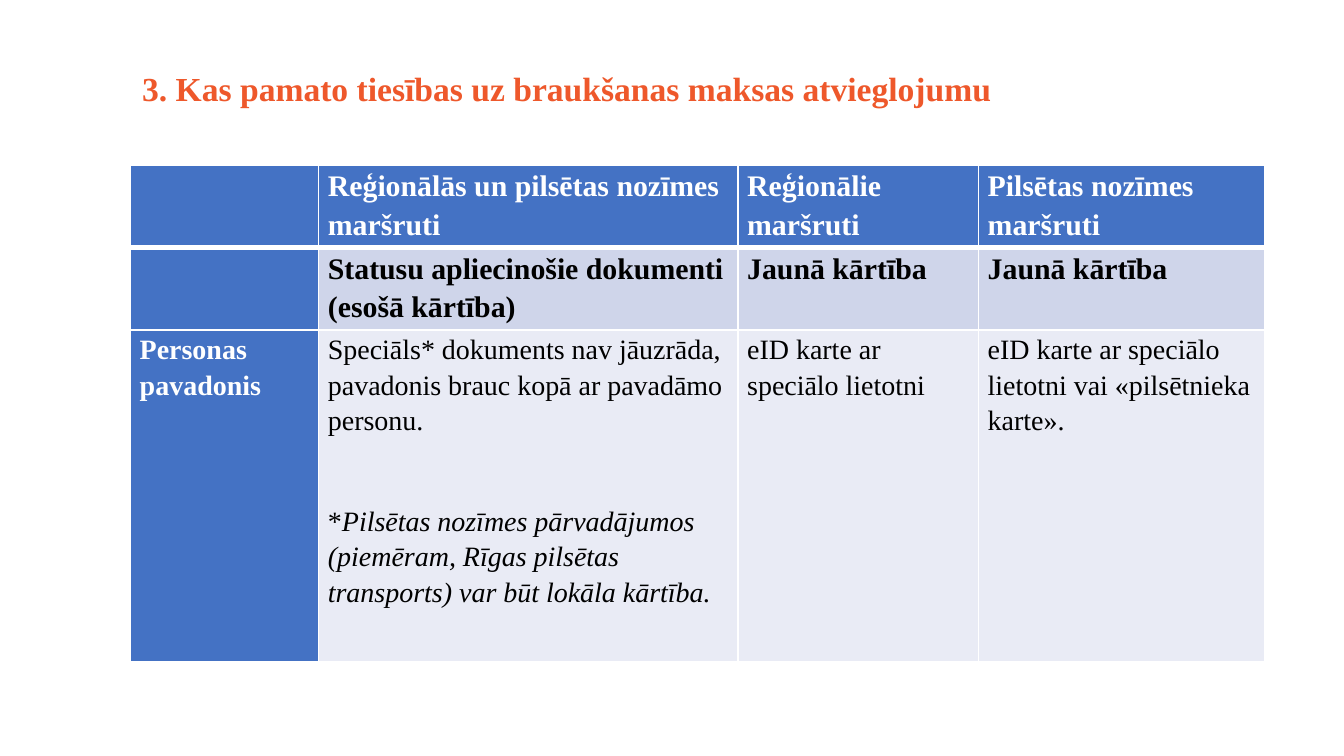
"""Build a slide with a table of fare discount documents."""
from dataclasses import dataclass

import lxml.etree
import pptx
import pptx.dml.color
import pptx.enum.text
import pptx.oxml.ns
import pptx.util

Pt = pptx.util.Pt
FONT = "Times New Roman"
WHITE, BLACK, BLUE = "FFFFFF", "000000", "4472C4"
WIDTHS = (100.8, 224.64, 128.88, 153.36)
HEIGHTS = (43.92, 21.6, 177.84)


@dataclass(frozen=True)
class Run:
    text: str
    slant: bool = False


@dataclass(frozen=True)
class Para:
    runs: tuple[Run, ...]
    before: float = 0


@dataclass(frozen=True)
class Style:
    size: float
    ink: str
    bold: bool = True


@dataclass(frozen=True)
class Row:
    fill: str
    head: Style
    body: Style
    cells: tuple[tuple[Para, ...], ...]


def plain(text: str) -> tuple[Para, ...]:
    return (Para((Run(text),)),)


HEAD = Style(16, WHITE)
LABEL = Style(15, WHITE)
NOTE = Para((Run("*"), Run(
    "Pilsētas nozīmes pārvadājumos (piemēram, Rīgas pilsētas transports) "
    "var būt lokāla kārtība.", True)), 27)
ROWS = (
    Row(BLUE, HEAD, HEAD, (
        (),
        plain("Reģionālās un pilsētas nozīmes maršruti"),
        plain("Reģionālie maršruti"),
        plain("Pilsētas nozīmes maršruti"))),
    Row("CFD5EA", HEAD, Style(16, BLACK), (
        (),
        plain("Statusu apliecinošie dokumenti (esošā kārtība)"),
        plain("Jaunā kārtība"),
        plain("Jaunā kārtība"))),
    Row("E9EBF5", LABEL, Style(15, BLACK, False), (
        plain("Personas pavadonis"),
        plain("Speciāls* dokuments nav jāuzrāda, pavadonis brauc kopā ar "
              "pavadāmo personu.") + (NOTE,),
        plain("eID karte ar speciālo lietotni"),
        plain("eID karte ar speciālo lietotni vai «pilsētnieka karte»."))),
)


def color(code: str) -> pptx.dml.color.RGBColor:
    return pptx.dml.color.RGBColor.from_string(code)


def write(line, part: Run, style: Style) -> None:
    run = line.add_run()
    run.text = part.text
    font = run.font
    font.name, font.size = FONT, Pt(style.size)
    font.bold, font.italic = style.bold, part.slant
    font.color.rgb = color(style.ink)


def border(cell, sides: dict[str, float]) -> None:
    props = cell._tc.get_or_add_tcPr()
    name = pptx.oxml.ns.qn
    for side, width in sides.items():
        edge = lxml.etree.SubElement(props, name(f"a:ln{side}"), w=str(Pt(width)))
        fill = lxml.etree.SubElement(edge, name("a:solidFill"))
        lxml.etree.SubElement(fill, name("a:srgbClr"), val=WHITE)


def fill_cell(cell, paras: tuple[Para, ...], style: Style, fill: str) -> None:
    cell.fill.solid()
    cell.fill.fore_color.rgb = color(fill)
    if not paras:
        return
    cell.margin_left = cell.margin_right = Pt(5.04)
    cell.margin_top = cell.margin_bottom = 0
    frame = cell.text_frame
    for index, para in enumerate(paras):
        line = frame.add_paragraph() if index else frame.paragraphs[0]
        line.line_spacing, line.space_after = 1.15, Pt(8)
        if para.before:
            line.space_before = Pt(para.before)
        for part in para.runs:
            write(line, part, style)


def add_title(slide) -> None:
    box = slide.shapes.add_textbox(Pt(69.12), Pt(30.24), Pt(607.68), Pt(72))
    frame = box.text_frame
    frame.word_wrap = True
    frame.vertical_anchor = pptx.enum.text.MSO_ANCHOR.TOP
    frame.margin_top = Pt(6.3)
    title = Run("3. Kas pamato tiesības uz braukšanas maksas atvieglojumu")
    write(frame.paragraphs[0], title, Style(18, "EE582B"))


def add_grid(slide) -> None:
    grid = slide.shapes.add_table(
        len(ROWS), len(WIDTHS), Pt(69.84), Pt(88.56),
        Pt(sum(WIDTHS)), Pt(sum(HEIGHTS))).table
    for column, width in zip(grid.columns, WIDTHS):
        column.width = Pt(width)
    for i, (row, height) in enumerate(zip(ROWS, HEIGHTS)):
        grid.rows[i].height = Pt(height)
        sides = {"L": 1, "R": 1, "T": 3 if i == 1 else 1, "B": 1 if i else 3}
        for j, paras in enumerate(row.cells):
            cell = grid.cell(i, j)
            border(cell, sides)
            style = row.body if j else row.head
            fill_cell(cell, paras, style, row.fill if j else BLUE)


def main() -> None:
    deck = pptx.Presentation()
    deck.slide_width, deck.slide_height = Pt(720), Pt(405)
    slide = deck.slides.add_slide(deck.slide_layouts[6])
    add_title(slide)
    add_grid(slide)
    deck.save("out.pptx")


if __name__ == "__main__":
    main()
